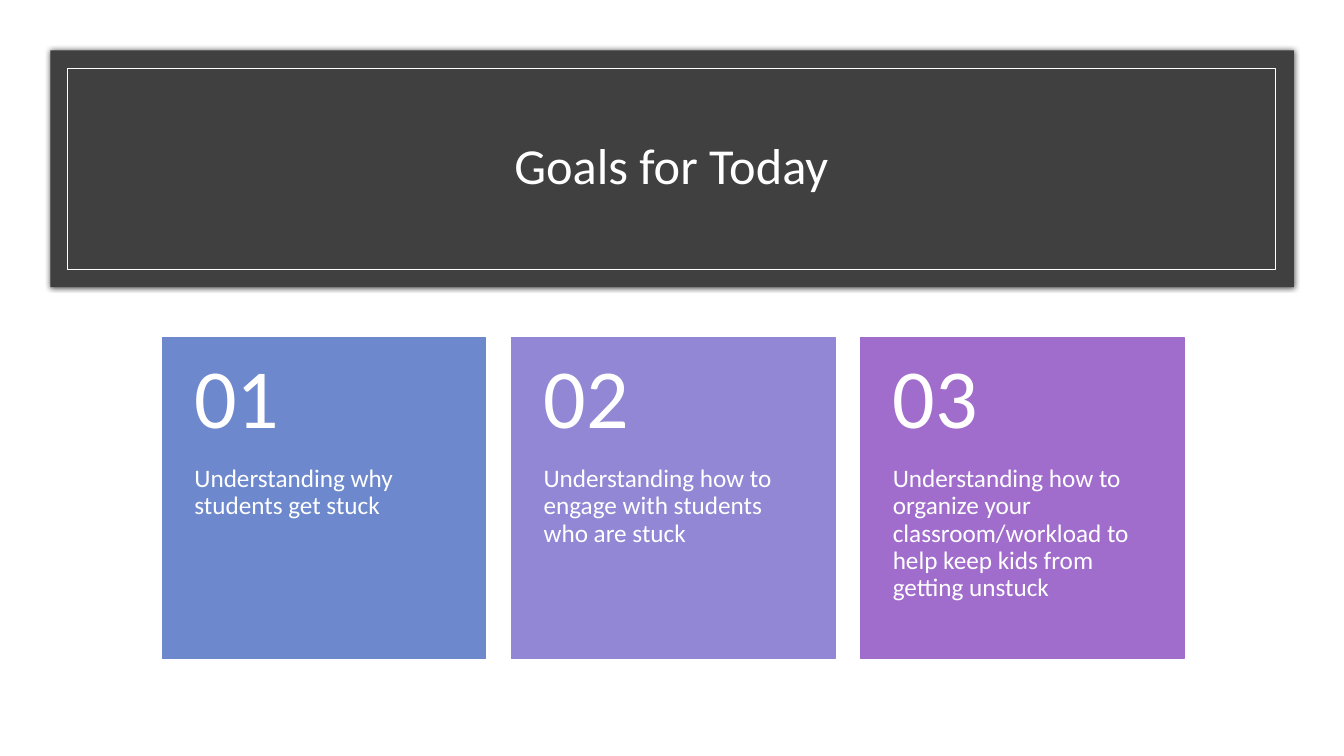
from dataclasses import dataclass

from lxml.etree import SubElement
from pptx import Presentation
from pptx.dml.color import RGBColor
from pptx.enum.shapes import MSO_SHAPE as Preset
from pptx.enum.text import MSO_ANCHOR as Anchor, MSO_AUTO_SIZE as AutoSize, PP_ALIGN as Align
from pptx.oxml.ns import qn
from pptx.shapes.autoshape import Shape
from pptx.shapes.shapetree import GroupShapes, SlideShapes
from pptx.text.text import TextFrame
from pptx.util import Cm, Pt

WHITE = RGBColor(0xFF, 0xFF, 0xFF)
CHARCOAL = RGBColor(0x40, 0x40, 0x40)
BLUE = RGBColor(0x6D, 0x88, 0xCC)
LAVENDER = RGBColor(0x91, 0x87, 0xD5)
PURPLE = RGBColor(0xA1, 0x6D, 0xCC)
FONT = "Calibri"

# Card grid, in centimetres
CARD_LEFT, CARD_TOP = 4.09, 8.51
CARD_WIDTH, CARD_HEIGHT = 8.15, 8.08
CARD_PITCH = 8.8
NUMBER_HEIGHT = 3.23
SIDE_INSET = 0.81


@dataclass(frozen=True)
class Box:
    left: float
    top: float
    width: float
    height: float

    def lengths(self) -> tuple[Cm, Cm, Cm, Cm]:
        return Cm(self.left), Cm(self.top), Cm(self.width), Cm(self.height)


@dataclass(frozen=True)
class Goal:
    text: str
    color: RGBColor


GOALS = (
    Goal("Understanding why students get stuck", BLUE),
    Goal("Understanding how to engage with students who are stuck", LAVENDER),
    Goal("Understanding how to organize your classroom/workload to help keep kids "
         "from getting unstuck", PURPLE),
)


def add_rectangle(shapes: SlideShapes | GroupShapes, box: Box) -> Shape:
    rectangle = shapes.add_shape(Preset.RECTANGLE, *box.lengths())
    rectangle.shadow.inherit = False
    return rectangle


def add_glow_shadow(shape: Shape) -> None:
    """Soft black shadow spreading evenly around the shape."""
    effects = shape.element.spPr.find(qn("a:effectLst"))
    shadow = SubElement(effects, qn("a:outerShdw"), blurRad=str(Pt(4)), dist="0",
                        dir="0", algn="ctr", rotWithShape="0")
    color = SubElement(shadow, qn("a:srgbClr"), val="000000")
    SubElement(color, qn("a:alpha"), val="66000")


def write(frame: TextFrame, text: str, size: int, align: Align, anchor: Anchor) -> None:
    frame.word_wrap = True
    frame.auto_size = AutoSize.NONE
    frame.vertical_anchor = anchor
    paragraph = frame.paragraphs[0]
    paragraph.alignment = align
    paragraph.line_spacing = 0.9
    run = paragraph.add_run()
    run.text = text
    run.font.name = FONT
    run.font.size = Pt(size)
    run.font.color.rgb = WHITE


def add_card_text(shapes: GroupShapes, box: Box, text: str, size: int, anchor: Anchor,
                  top_inset: float, bottom_inset: float) -> None:
    frame = shapes.add_textbox(*box.lengths()).text_frame
    frame.margin_left = frame.margin_right = Cm(SIDE_INSET)
    frame.margin_top, frame.margin_bottom = Cm(top_inset), Cm(bottom_inset)
    write(frame, text, size, Align.LEFT, anchor)


def add_goal_card(shapes: GroupShapes, index: int, goal: Goal) -> None:
    left = CARD_LEFT + index * CARD_PITCH
    card = add_rectangle(shapes, Box(left, CARD_TOP, CARD_WIDTH, CARD_HEIGHT))
    card.fill.solid()
    card.fill.fore_color.rgb = goal.color
    card.line.color.rgb = goal.color
    card.line.width = Pt(1)

    goal_box = Box(left, CARD_TOP + NUMBER_HEIGHT, CARD_WIDTH, CARD_HEIGHT - NUMBER_HEIGHT)
    add_card_text(shapes, goal_box, goal.text, 18, Anchor.TOP, 0, 0.91)
    number_box = Box(left, CARD_TOP, CARD_WIDTH, NUMBER_HEIGHT)
    add_card_text(shapes, number_box, f"{index + 1:02}", 60, Anchor.MIDDLE, 0.46, 0.46)


def main() -> None:
    deck = Presentation()
    deck.slide_width, deck.slide_height = Cm(33.87), Cm(19.05)
    slide = deck.slides.add_slide(deck.slide_layouts[5])
    slide.background.fill.solid()
    slide.background.fill.fore_color.rgb = WHITE

    # Banner with inner frame
    banner = add_rectangle(slide.shapes, Box(1.27, 1.27, 31.34, 5.97))
    banner.fill.solid()
    banner.fill.fore_color.rgb = CHARCOAL
    banner.line.fill.background()
    add_glow_shadow(banner)
    inner_frame = add_rectangle(slide.shapes, Box(1.7, 1.73, 30.43, 5.05))
    inner_frame.fill.background()
    inner_frame.line.color.rgb = WHITE
    inner_frame.line.width = Pt(0.5)

    # Title, raised above the banner
    title = slide.shapes.title
    title.left, title.top, title.width, title.height = Box(2.95, 2.34, 27.94, 3.81).lengths()
    write(title.text_frame, "Goals for Today", 36, Align.CENTER, Anchor.MIDDLE)
    inner_frame.element.addnext(title.element)

    # Numbered goal cards
    cards = slide.shapes.add_group_shape()
    for index, goal in enumerate(GOALS):
        add_goal_card(cards.shapes, index, goal)

    deck.save("out.pptx")


if __name__ == "__main__":
    main()
